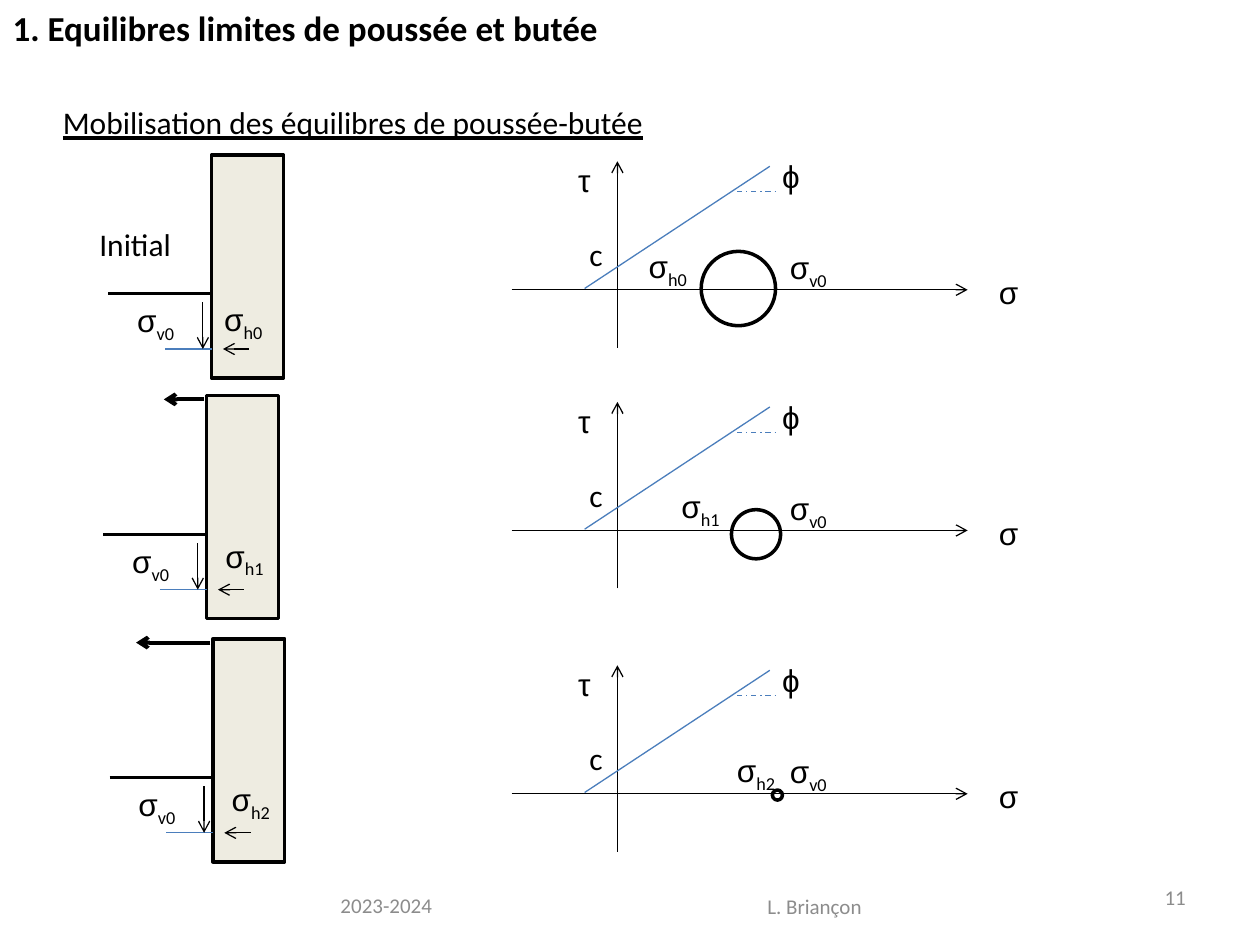
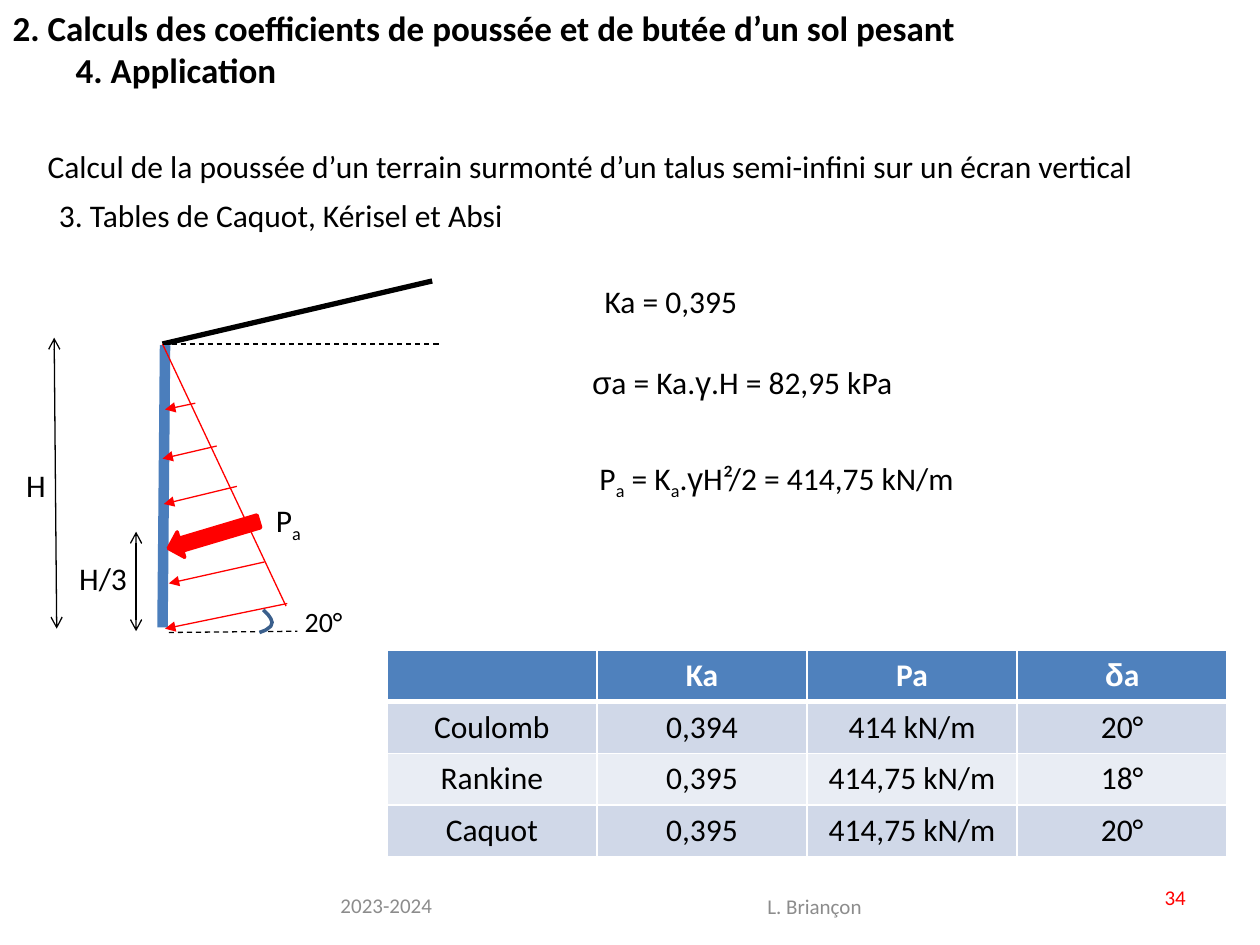
"""Build two soil-mechanics slides on active and passive earth pressure."""
from itertools import groupby

from lxml import etree
from pptx import Presentation
from pptx.dml.color import RGBColor
from pptx.enum.dml import MSO_LINE
from pptx.enum.shapes import MSO_CONNECTOR, MSO_SHAPE
from pptx.enum.text import MSO_ANCHOR, MSO_AUTO_SIZE, PP_ALIGN
from pptx.oxml.ns import qn
from pptx.util import Inches, Pt

STRAIGHT = MSO_CONNECTOR.STRAIGHT
RECTANGLE, ELLIPSE, LEFT_ARROW = MSO_SHAPE.RECTANGLE, MSO_SHAPE.OVAL, MSO_SHAPE.LEFT_ARROW
DASH, DASH_DOT = MSO_LINE.DASH, MSO_LINE.DASH_DOT
LEFT, CENTER, RIGHT = PP_ALIGN.LEFT, PP_ALIGN.CENTER, PP_ALIGN.RIGHT
TOP, MIDDLE = MSO_ANCHOR.TOP, MSO_ANCHOR.MIDDLE
GROW, FIXED = MSO_AUTO_SIZE.SHAPE_TO_FIT_TEXT, MSO_AUTO_SIZE.NONE

SLIDE_WIDTH, SLIDE_HEIGHT = Inches(10), Inches(7.5)
COLUMN, ROW = SLIDE_WIDTH / 10, SLIDE_HEIGHT / 7.5
TITLE_ONLY = 5
FONT, GREEK_FONT, GREEK = "Calibri", "Arial", "σγδτϕ"
COLORS = {
    "ink": "000000", "white": "FFFFFF", "footer": "8C8C8C", "red": "FF0000",
    "blue": "4B7EBC", "arc": "3A5F8C", "wall": "EEECE1",
    "header": "4F81BD", "odd row": "D0D8E8", "even row": "E9EDF4",
}


def color(name):
    """Return the named palette colour."""
    return RGBColor.from_string(COLORS[name])


def grid(*lengths):
    """Turn alternating columns and rows into slide lengths."""
    return [round(length * (ROW if index % 2 else COLUMN))
            for index, length in enumerate(lengths)]


def write(paragraph, markup, size=18, ink="ink", bold=False, underline=False, align=LEFT):
    """Write text with ~subscripts~ and Greek letters in their own font."""
    paragraph.alignment = align
    for index, part in enumerate(markup.split("~")):
        for is_greek, letters in groupby(part, lambda letter: letter in GREEK):
            run = paragraph.add_run()
            run.text = "".join(letters)
            run.font.name = GREEK_FONT if is_greek else FONT
            run.font.size = Pt(size)
            run.font.bold = bold
            run.font.underline = underline
            run.font.color.rgb = color(ink)
            if index % 2:
                run._r.get_or_add_rPr().set("baseline", "-25000")


def add_label(slide, markup, left, top, width=0.52, height=0.4, **style):
    """Add a one-line text box that grows with its text."""
    box = slide.shapes.add_textbox(*grid(left, top, width, height))
    box.text_frame.word_wrap = False
    box.text_frame.auto_size = GROW
    write(box.text_frame.paragraphs[0], markup, **style)


def add_footer(slide, text, left, top, width, align=CENTER, ink="footer", indent=0.1):
    """Add one footer field, centred vertically."""
    box = slide.shapes.add_textbox(*grid(left, top, width, 0.4))
    frame = box.text_frame
    frame.word_wrap = True
    frame.vertical_anchor = MIDDLE
    frame.margin_left = grid(indent)[0]
    write(frame.paragraphs[0], text, size=12, ink=ink, align=align)


def add_titled_slide(presentation, titles, width, number, number_ink="footer"):
    """Add a slide with its title lines and the shared footers."""
    slide = presentation.slides.add_slide(presentation.slide_layouts[TITLE_ONLY])
    title = slide.shapes.title
    title.left, title.top, title.width, title.height = grid(0, 0, width, 0.77)
    frame = title.text_frame
    frame.word_wrap = False
    frame.auto_size = FIXED
    frame.vertical_anchor = TOP
    for index, text in enumerate(titles):
        paragraph = frame.add_paragraph() if index else frame.paragraphs[0]
        if index:
            paragraph._p.get_or_add_pPr().set("marL", str(grid(0.5)[0]))
        write(paragraph, text, size=20, bold=True)
    add_footer(slide, "2023-2024", 0.63, 6.98, 4.09, indent=0.88)
    add_footer(slide, "L. Briançon", 4.88, 6.99, 3.17)
    add_footer(slide, number, 7.18, 6.92, 2.33, RIGHT, number_ink)
    return slide


def add_line(slide, start, end, ink="ink", width=0.75, dash=None, head=None, tail=None):
    """Add a straight line with optional dashes and arrowheads."""
    connector = slide.shapes.add_connector(STRAIGHT, *grid(*start, *end))
    connector.line.color.rgb = color(ink)
    connector.line.width = Pt(width)
    if dash:
        connector.line.dash_style = dash
    properties = connector._element.spPr
    for tag, kind in (("a:headEnd", head), ("a:tailEnd", tail)):
        if kind:
            etree.SubElement(properties.find(qn("a:ln")), qn(tag), type=kind)
    etree.SubElement(properties, qn("a:effectLst"))


def outline(shape, line, fill=None):
    """Give a shape a two-point line and an optional fill."""
    shape.shadow.inherit = False
    shape.line.color.rgb = color(line)
    shape.line.width = Pt(2)
    if fill:
        shape.fill.solid()
        shape.fill.fore_color.rgb = color(fill)
    else:
        shape.fill.background()


def add_figure(slide, kind, left, top, width, height, line="ink", fill=None):
    """Add an outlined preset shape."""
    shape = slide.shapes.add_shape(kind, *grid(left, top, width, height))
    outline(shape, line, fill)
    return shape


def add_wall(slide, left, top, stress, stress_offset, pull):
    """Draw a wall with its ground level, stresses and pull arrow."""
    ground, depth = top + 1.1, top + 1.54
    add_figure(slide, RECTANGLE, left, top, 0.57, 1.77, fill="wall")
    add_line(slide, (left - 0.82, ground), (left, ground), width=1.5)
    add_line(slide, (left - 0.37, depth), (left, depth), "blue")
    add_line(slide, (left - 0.07, top + 1.17), (left - 0.07, depth), tail="arrow")
    add_line(slide, (left + 0.09, depth), (left + 0.3, depth), head="arrow")
    add_label(slide, "σ~v0~", left - 0.69, top + 1.11)
    add_label(slide, stress, left + stress_offset[0], top + stress_offset[1])
    if pull:
        start = left - 0.02
        add_line(slide, (start, top + 0.03), (start - pull, top + 0.03),
                 width=2.25, tail="arrow")


def add_mohr_plot(slide, axis, stress, stress_left, center, diameter):
    """Draw a Mohr circle under its failure line, around a stress axis."""
    add_line(slide, (4.06, axis), (7.68, axis), tail="arrow")
    add_line(slide, (4.9, axis + 0.46), (4.9, axis - 1.02), tail="arrow")
    add_line(slide, (4.64, axis - 0.01), (6.11, axis - 0.98), "blue")
    add_line(slide, (5.85, axis - 0.78), (6.17, axis - 0.78), "blue", dash=DASH_DOT)
    add_figure(slide, ELLIPSE, center[0] - diameter / 2, center[1] - diameter / 2,
               diameter, diameter)
    labels = (("σ", 7.83, -0.18, 0.35), ("τ", 4.49, -1.07, 0.31), ("c", 4.58, -0.48, 0.31),
              ("ϕ", 6.11, -1.1, 0.35), ("σ~v0~", 6.17, -0.38, 0.52),
              (stress, stress_left, -0.39, 0.53))
    for markup, left, offset, width in labels:
        add_label(slide, markup, left, axis + offset, width)


def add_pressure_diagram(slide):
    """Draw the screen, its slope and the pressure triangle."""
    add_line(slide, (1.29, 2.73), (3.43, 2.23), width=3)
    add_line(slide, (1.31, 2.74), (1.29, 4.98), "blue", 6)
    add_line(slide, (1.29, 2.73), (2.27, 4.81), "red")
    pressures = (((1.55, 3.2), (1.31, 3.25)), ((1.72, 3.54), (1.29, 3.64)),
                 ((1.88, 3.86), (1.3, 4)), ((2.1, 4.46), (1.34, 4.63)),
                 ((2.28, 4.79), (1.31, 4.99)))
    for start, end in pressures:
        add_line(slide, start, end, "red", tail="triangle")
    resultant = add_figure(slide, LEFT_ARROW, 1.32, 4.14, 0.75, 0.21, "red", "red")
    resultant.rotation = 343.4
    for start, end in (((0.43, 2.68), (0.45, 4.99)), ((1.08, 4.22), (1.08, 5.01))):
        add_line(slide, start, end, head="arrow", tail="arrow")
    for start, end in (((1.29, 2.73), (3.51, 2.73)), ((1.34, 5.02), (2.36, 5.01))):
        add_line(slide, start, end, dash=DASH)
    arc = ((2.06, 5.02), (2.11, 5), (2.15, 4.97), (2.16, 4.94),
           (2.15, 4.91), (2.13, 4.88), (2.09, 4.84))
    start, *points = [grid(*point) for point in arc]
    builder = slide.shapes.build_freeform(*start)
    builder.add_line_segments(points, close=False)
    outline(builder.convert_to_shape(), "arc")
    for markup, left, top, width in (("P~a~", 2.09, 3.93, 0.41), ("H", 0.11, 3.65, 0.36),
                                     ("H/3", 0.53, 4.39, 0.59)):
        add_label(slide, markup, left, top, width)
    add_label(slide, "20°", 2.32, 4.75, 0.51, 0.37, size=16)


def set_borders(cell, top, bottom):
    """Give a cell white borders of the stated widths."""
    properties = cell._tc.get_or_add_tcPr()
    for side, width in (("L", 1), ("R", 1), ("T", top), ("B", bottom)):
        border = etree.SubElement(properties, qn(f"a:ln{side}"), w=str(Pt(width)))
        fill = etree.SubElement(border, qn("a:solidFill"))
        etree.SubElement(fill, qn("a:srgbClr"), val=COLORS["white"])


def add_results_table(slide, rows, left, top, width, row_height):
    """Add the comparison table with a header and banded rows."""
    frame = slide.shapes.add_table(len(rows), len(rows[0]),
                                   *grid(left, top, width, row_height * len(rows)))
    for row_index, row in enumerate(rows):
        is_header = row_index == 0
        band = "header" if is_header else "odd row" if row_index % 2 else "even row"
        for column_index, text in enumerate(row):
            cell = frame.table.cell(row_index, column_index)
            set_borders(cell, 3 if row_index == 1 else 1, 3 if is_header else 1)
            cell.fill.solid()
            cell.fill.fore_color.rgb = color(band)
            write(cell.text_frame.paragraphs[0], text, bold=is_header, align=CENTER,
                  ink="white" if is_header else "ink")


def build_equilibrium_slide(presentation):
    """Build the slide on the mobilisation of limit equilibria."""
    slide = add_titled_slide(presentation, ["1. Equilibres limites de poussée et butée"],
                             4.89, "11")
    add_label(slide, "Mobilisation des équilibres de poussée-butée", 0.4, 0.77, 4.87,
              underline=True)
    add_label(slide, "Initial", 0.69, 1.74, 0.78)
    walls = ((1.68, 1.23, (0, 1.1), 0), (1.64, 3.14, (0.05, 1.07), 0.32),
             (1.69, 5.07, (0.05, 1.07), 0.59))
    plots = ((2.3, 5.05, (5.86, 2.29), 0.59), (4.21, 5.31, (6, 4.24), 0.39),
             (6.3, 5.75, (6.17, 6.31), 0.08))
    for stage, (wall, plot) in enumerate(zip(walls, plots)):
        stress = f"σ~h{stage}~"
        left, top, stress_offset, pull = wall
        add_wall(slide, left, top, stress, stress_offset, pull)
        axis, stress_left, center, diameter = plot
        add_mohr_plot(slide, axis, stress, stress_left, center, diameter)


def build_application_slide(presentation):
    """Build the slide applying the pressure tables to a screen."""
    titles = ["2. Calculs des coefficients de poussée et de butée d’un sol pesant",
              "4. Application"]
    slide = add_titled_slide(presentation, titles, 7.76, "34", "red")
    labels = (
        ("Calcul de la poussée d’un terrain surmonté d’un talus semi-infini "
         "sur un écran vertical", 0.28, 1.12, 9.04),
        ("3. Tables de Caquot, Kérisel et Absi", 0.37, 1.51, 3.77),
        ("Ka = 0,395", 4.7, 2.19, 1.27),
        ("σa = Ka.γ.H = 82,95 kPa", 4.6, 2.83, 2.61),
        ("P~a~ = K~a~.γH²/2 = 414,75 kN/m", 4.66, 3.59, 3.1),
    )
    for markup, left, top, width in labels:
        add_label(slide, markup, left, top, width)
    add_pressure_diagram(slide)
    rows = (("", "Ka", "Pa", "δa"),
            ("Coulomb", "0,394", "414 kN/m", "20°"),
            ("Rankine", "0,395", "414,75 kN/m", "18°"),
            ("Caquot", "0,395", "414,75 kN/m", "20°"))
    add_results_table(slide, rows, 3.07, 5.16, 6.67, 0.41)


def main():
    """Build and save the presentation."""
    presentation = Presentation()
    presentation.slide_width, presentation.slide_height = SLIDE_WIDTH, SLIDE_HEIGHT
    build_equilibrium_slide(presentation)
    build_application_slide(presentation)
    presentation.save("out.pptx")


if __name__ == "__main__":
    main()
